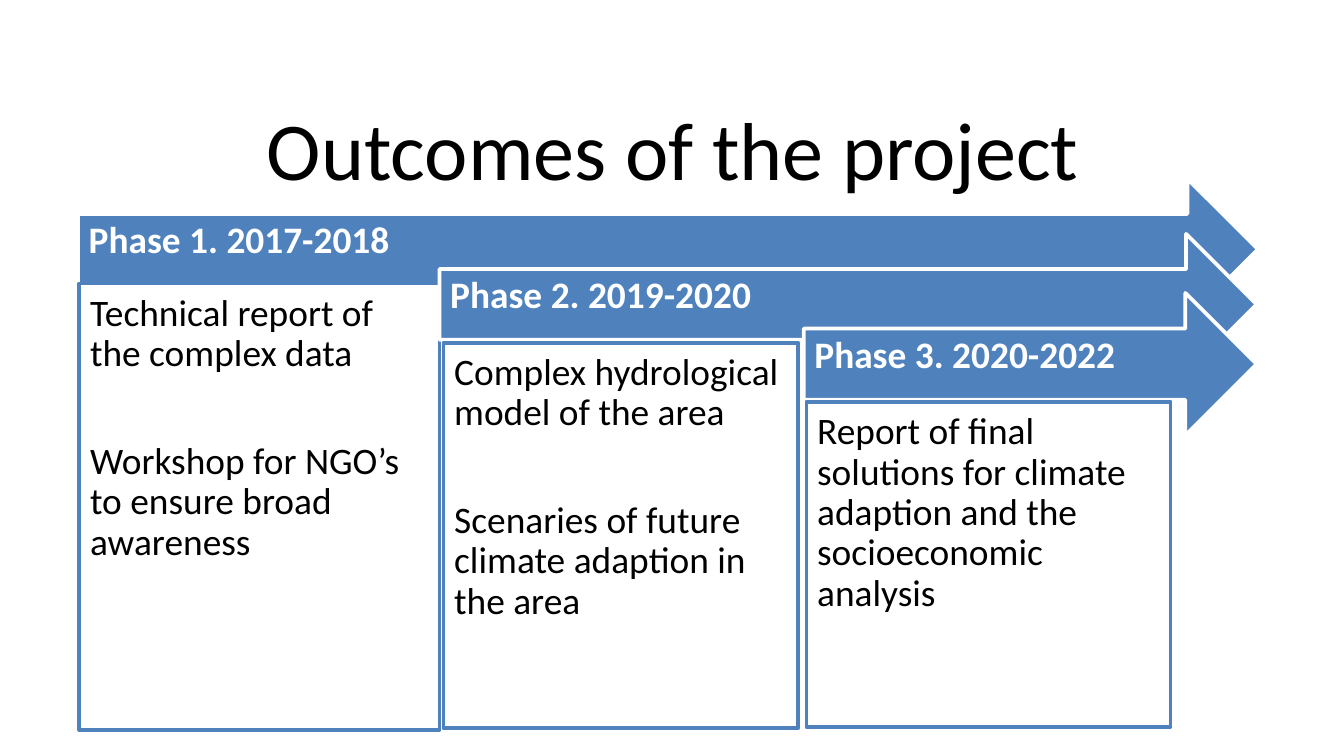
from pptx import Presentation
from pptx.dml.color import RGBColor
from pptx.enum.shapes import MSO_SHAPE
from pptx.enum.text import MSO_ANCHOR, PP_ALIGN
from pptx.util import Inches, Pt

ARROW = MSO_SHAPE.RIGHT_ARROW
RECTANGLE = MSO_SHAPE.RECTANGLE
TOP, MIDDLE = MSO_ANCHOR.TOP, MSO_ANCHOR.MIDDLE
LEFT, CENTER = PP_ALIGN.LEFT, PP_ALIGN.CENTER

BLUE = RGBColor(0x4F, 0x81, 0xBD)
WHITE = RGBColor(0xFF, 0xFF, 0xFF)
BLACK = RGBColor(0x00, 0x00, 0x00)

# Heading, arrow bounds, outcomes, box bounds
PHASES = [
    ("Phase 1. 2017-2018", (0.58, 1.33, 8.78, 1.05),
     ["Technical report of the complex data",
      "Workshop for NGO’s to ensure broad awareness"],
     (0.59, 2.11, 2.68, 3.32)),
    ("Phase 2. 2019-2020", (3.27, 1.74, 6.08, 1.05),
     ["Complex hydrological model of the area",
      "Scenaries of future climate adaption in the area"],
     (3.3, 2.55, 2.64, 2.87)),
    ("Phase 3. 2020-2022", (5.98, 2.18, 3.37, 1.06),
     ["Report of final solutions for climate adaption and the "
      "socioeconomic analysis"],
     (6, 2.99, 2.71, 2.42)),
]


class PhaseSlide:
    font_name = "Calibri"
    title_size = Pt(44)
    text_size = Pt(20)
    line_width = Pt(2)
    outcome_gap = Pt(36)

    def __init__(self, presentation):
        self.slide = presentation.slides.add_slide(presentation.slide_layouts[5])

    def format_paragraph(self, paragraph, size, color, alignment, bold=False):
        paragraph.alignment = alignment
        paragraph.font.name = self.font_name
        paragraph.font.size = size
        paragraph.font.bold = bold
        paragraph.font.color.rgb = color

    def title(self, text, bounds):
        shape = self.slide.shapes.title
        shape.left, shape.top, shape.width, shape.height = map(Inches, bounds)
        shape.text_frame.text = text
        shape.text_frame.vertical_anchor = MIDDLE
        self.format_paragraph(shape.text_frame.paragraphs[0], self.title_size, BLACK, CENTER)

    def block(self, kind, bounds, fill, line, texts, color, anchor, margins, bold=False):
        """Add a filled, outlined shape with one paragraph per text."""
        shape = self.slide.shapes.add_shape(kind, *map(Inches, bounds))
        shape.shadow.inherit = False
        shape.fill.solid()
        shape.fill.fore_color.rgb = fill
        shape.line.color.rgb = line
        shape.line.width = self.line_width
        frame = shape.text_frame
        frame.word_wrap = True
        frame.vertical_anchor = anchor
        (frame.margin_left, frame.margin_top,
         frame.margin_right, frame.margin_bottom) = map(Inches, margins)
        for index, text in enumerate(texts):
            paragraph = frame.add_paragraph() if index else frame.paragraphs[0]
            paragraph.text = text
            paragraph.line_spacing = 0.9
            if index:
                paragraph.space_before = self.outcome_gap
            self.format_paragraph(paragraph, self.text_size, color, LEFT, bold)

    def phase_arrow(self, heading, bounds):
        self.block(ARROW, bounds, BLUE, WHITE, [heading], WHITE, MIDDLE,
                   (0.08, 0.08, 0.28, 0.2), bold=True)

    def outcome_box(self, outcomes, bounds):
        self.block(RECTANGLE, bounds, WHITE, BLUE, outcomes, BLACK, TOP,
                   (0.08, 0.08, 0.08, 0.08))


def main():
    presentation = Presentation()
    presentation.slide_width = Inches(10)
    presentation.slide_height = presentation.slide_width * 9 // 16
    slide = PhaseSlide(presentation)
    slide.title("Outcomes of the project", (0.51, 0.63, 9, 0.94))
    for heading, arrow_bounds, outcomes, box_bounds in PHASES:
        slide.phase_arrow(heading, arrow_bounds)
        slide.outcome_box(outcomes, box_bounds)
    presentation.save("out.pptx")


if __name__ == "__main__":
    main()
